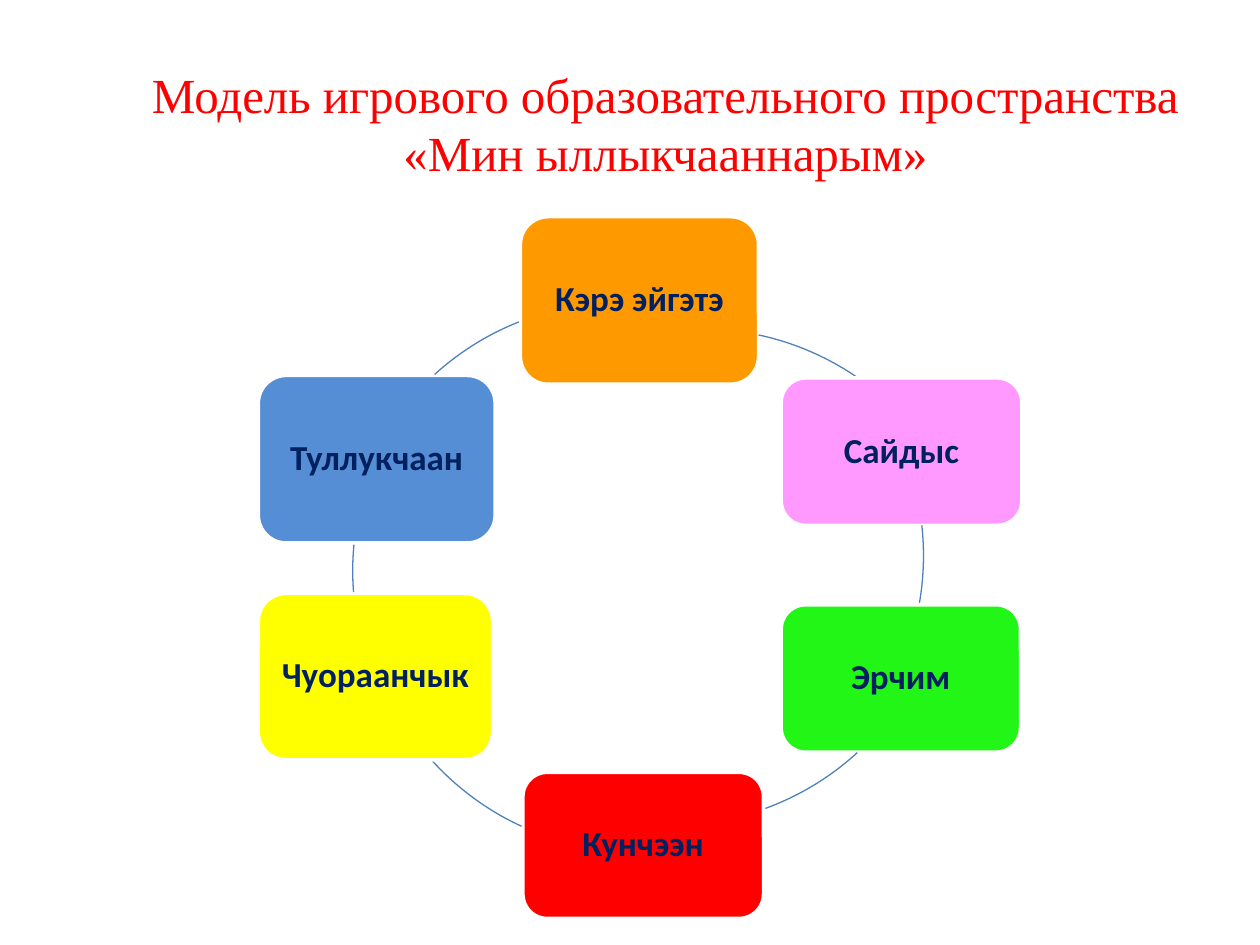
from pptx import Presentation
from pptx.dml.color import RGBColor
from pptx.enum import shapes, text
from pptx.util import Inches, Pt

RED = RGBColor(0xFF, 0x00, 0x00)
NAVY = RGBColor(0x00, 0x20, 0x60)
WHITE = RGBColor(0xFF, 0xFF, 0xFF)
ARC_BLUE = RGBColor(0x4F, 0x81, 0xBD)
ORANGE = RGBColor(0xFF, 0x99, 0x00)
PINK = RGBColor(0xFF, 0x99, 0xFF)
GREEN = RGBColor(0x21, 0xF6, 0x16)
YELLOW = RGBColor(0xFF, 0xFF, 0x00)
BLUE = RGBColor(0x55, 0x8E, 0xD5)

ARC_SIZE = 4.4
CYCLE_BOX = (2.05, 1.72, 6.06, 5.57)

# Clockwise from the top: label, fill, (left, top, width, height) in the cycle box
NODES = [
    ("Кэрэ эйгэтэ", ORANGE, (2.08, 0, 1.89, 1.33)),
    ("Сайдыс", PINK, (4.15, 1.28, 1.91, 1.17)),
    ("Эрчим", GREEN, (4.15, 3.08, 1.9, 1.17)),
    ("Кунчээн", RED, (2.1, 4.41, 1.91, 1.16)),
    ("Чуораанчык", YELLOW, (0, 2.99, 1.86, 1.32)),
    ("Туллукчаан", BLUE, (0, 1.26, 1.88, 1.33)),
]
# Clockwise from the top: (left, top) in the cycle box, start and end in degrees
ARCS = [
    (1.31, 0.89, 282.1, 304.05),
    (0.88, 0.49, 353.75, 9.93),
    (1.07, 0.43, 47.57, 70.1),
    (0.81, 0.64, 114.7, 137.95),
    (0.75, 0.61, 175.56, 185.74),
    (0.68, 0.68, 227.76, 248.34),
]


def write_text(frame, content, *, font, size, color, bold=False, line_spacing=None):
    frame.word_wrap = True
    frame.vertical_anchor = text.MSO_ANCHOR.MIDDLE
    para = frame.paragraphs[0]
    para.alignment = text.PP_ALIGN.CENTER
    if line_spacing:
        para.line_spacing = line_spacing
    span = para.add_run()
    span.text = content
    span.font.name = font
    span.font.size = Pt(size)
    span.font.bold = bold
    span.font.color.rgb = color


def add_title(page, box):
    title = page.shapes.title
    title.left, title.top, title.width, title.height = map(Inches, box)
    write_text(title.text_frame,
               "Модель игрового образовательного пространства «Мин ыллыкчааннарым»",
               font="Times New Roman", size=28, color=RED)


def add_node(page, label, fill, box):
    node = page.shapes.add_shape(shapes.MSO_SHAPE.ROUNDED_RECTANGLE, *map(Inches, box))
    node.shadow.inherit = False
    node.fill.solid()
    node.fill.fore_color.rgb = fill
    node.line.color.rgb = WHITE
    node.line.width = Pt(2)
    frame = node.text_frame
    frame.margin_left = frame.margin_right = Inches(0.02)
    frame.margin_top = frame.margin_bottom = Inches(0.02)
    write_text(frame, label, font="Calibri", size=20, color=NAVY, bold=True,
               line_spacing=0.9)


def add_arc(page, left, top, start, end):
    arc = page.shapes.add_shape(shapes.MSO_SHAPE.ARC, Inches(left), Inches(top),
                                Inches(ARC_SIZE), Inches(ARC_SIZE))
    arc.shadow.inherit = False
    arc.fill.background()
    arc.line.color.rgb = ARC_BLUE
    arc.line.width = Pt(0.75)
    # Angles are stored in 1/60000 degree, adjustments in 1/100000
    for index, degrees in enumerate((start, end)):
        arc.adjustments[index] = degrees * 0.6


def add_cycle(page, box):
    left, top = box[:2]
    for (label, fill, (x, y, width, height)), arc in zip(NODES, ARCS):
        add_node(page, label, fill, (left + x, top + y, width, height))
        arc_x, arc_y, start, end = arc
        add_arc(page, left + arc_x, top + arc_y, start, end)


def main():
    deck = Presentation()
    deck.slide_width, deck.slide_height = Inches(10), Inches(7.5)
    page = deck.slides.add_slide(deck.slide_layouts[5])
    add_title(page, (0.78, 0.31, 9, 1.33))
    add_cycle(page, CYCLE_BOX)
    deck.save("out.pptx")


if __name__ == "__main__":
    main()
